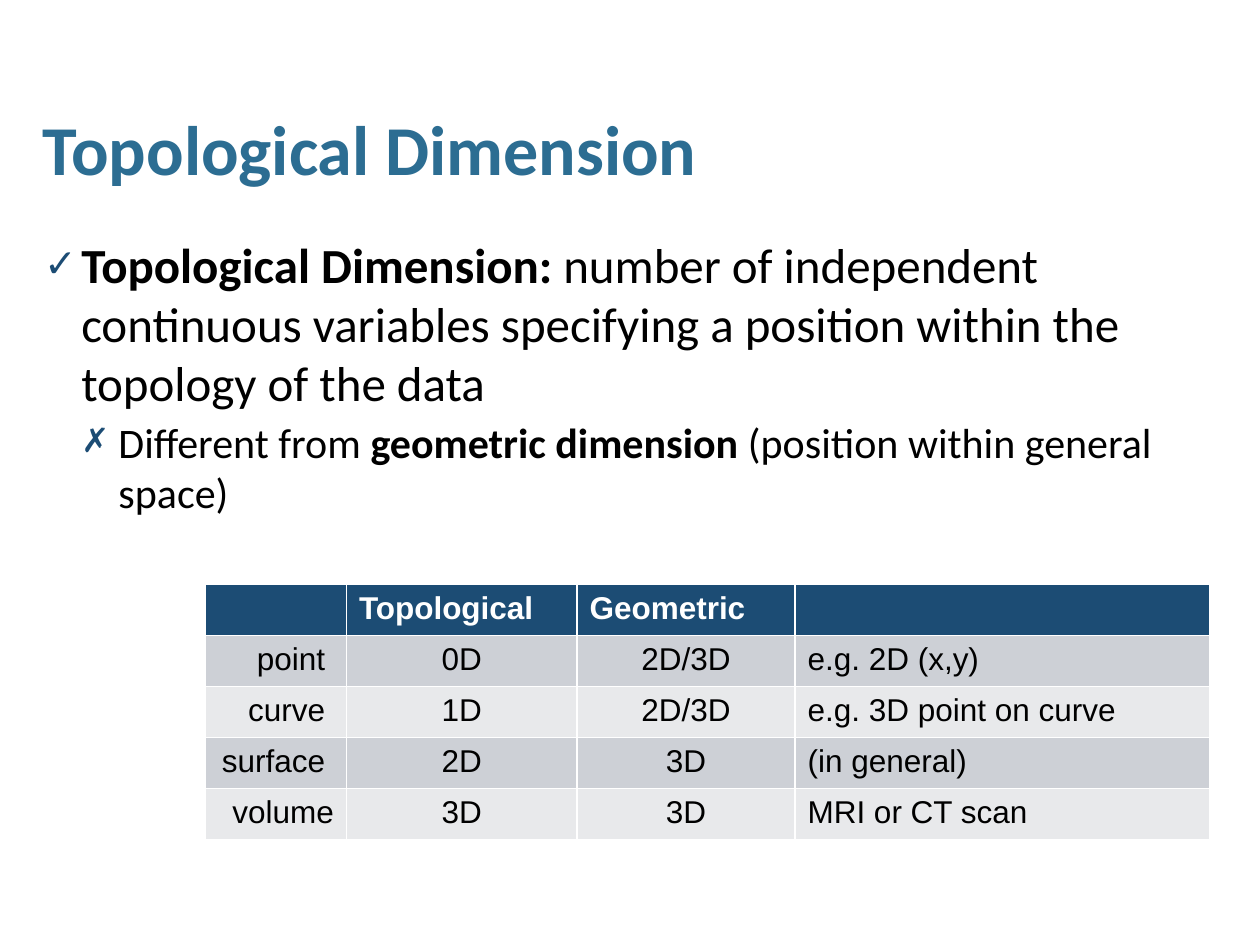
"""Build the slide on topological dimension."""
import pptx
import pptx.dml.color
import pptx.enum.text
import pptx.util
from lxml import etree
from pptx.oxml.ns import qn

RGBColor = pptx.dml.color.RGBColor
Inches = pptx.util.Inches
Pt = pptx.util.Pt
Align = pptx.enum.text.PP_ALIGN

TITLE_BLUE = RGBColor(0x2C, 0x6D, 0x92)
NAVY = RGBColor(0x1C, 0x4C, 0x74)
DARK_BAND = RGBColor(0xCD, 0xD0, 0xD6)
LIGHT_BAND = RGBColor(0xE8, 0xE9, 0xEB)
BLACK = RGBColor(0, 0, 0)
WHITE = RGBColor(255, 255, 255)

INDENT = 0.295
COLUMNS = (1.12, 1.83, 1.73, 3.29)
ROW_HEIGHT = 0.405
ALIGNMENTS = (Align.RIGHT, Align.CENTER, Align.CENTER, Align.LEFT)
ROWS = (
    ("", "Topological", "Geometric", ""),
    ("point ", "0D", "2D/3D", "e.g. 2D (x,y)"),
    ("curve ", "1D", "2D/3D", "e.g. 3D point on curve"),
    ("surface ", "2D", "3D", "(in general)"),
    ("volume", "3D", "3D", "MRI or CT scan"),
)
POINTS = (
    ("✓", 28, (("Topological Dimension: ", True),
               ("number of independent continuous variables specifying "
                "a position within the topology of the data", False))),
    ("✗", 24, (("Different from ", False),
               ("geometric dimension ", True),
               ("(position within general space)", False))),
)


def set_font(para, name, size, color, bold=None):
    """Format the whole paragraph."""
    font = para.font
    font.name, font.size, font.bold = name, Pt(size), bold
    font.color.rgb = color


def place(box, left, top, width, height):
    """Move a placeholder and set its text margins."""
    box.left, box.top = Inches(left), Inches(top)
    box.width, box.height = Inches(width), Inches(height)
    frame = box.text_frame
    frame.margin_left = frame.margin_right = 0
    frame.margin_top = frame.margin_bottom = Inches(0.05)
    frame.auto_size = pptx.enum.text.MSO_AUTO_SIZE.NONE
    return frame


def add_bullet(para, mark, level):
    """Give the paragraph a hanging navy bullet."""
    props = para._p.get_or_add_pPr()
    props.set("marL", str(Inches(INDENT * (level + 1))))
    props.set("indent", str(-Inches(INDENT)))
    color = etree.SubElement(props, qn("a:buClr"))
    etree.SubElement(color, qn("a:srgbClr"), val=str(NAVY))
    etree.SubElement(props, qn("a:buSzPct"), val="80000")
    etree.SubElement(props, qn("a:buChar"), char=mark)


def fill_title(box):
    """Write the slide title."""
    para = place(box, 0.34, 0.84, 9.31, 0.73).paragraphs[0]
    para.text = "Topological Dimension"
    para.alignment = Align.LEFT
    para.line_spacing = 0.95
    set_font(para, "Calibri", 40, TITLE_BLUE, True)


def fill_body(box):
    """Write the definition and its remark."""
    frame = place(box, 0.35, 1.81, 9.32, 4.98)
    for level, (mark, size, spans) in enumerate(POINTS):
        para = frame.add_paragraph() if level else frame.paragraphs[0]
        para.level = level
        para.space_before = Pt(3 if level else 0)
        add_bullet(para, mark, level)
        set_font(para, "Calibri", size, BLACK)
        for text, bold in spans:
            span = para.add_run()
            span.text = text
            span.font.bold = bold


def add_dimension_table(page):
    """Add the table comparing the two kinds of dimension."""
    table = page.shapes.add_table(
        len(ROWS), len(COLUMNS), Inches(1.63), Inches(4.64),
        Inches(sum(COLUMNS)), Inches(ROW_HEIGHT * len(ROWS))).table
    for column, width in zip(table.columns, COLUMNS):
        column.width = Inches(width)
    for row, texts in enumerate(ROWS):
        header = row == 0
        band = NAVY if header else DARK_BAND if row % 2 else LIGHT_BAND
        for column, text in enumerate(texts):
            cell = table.cell(row, column)
            cell.fill.solid()
            cell.fill.fore_color.rgb = band
            para = cell.text_frame.paragraphs[0]
            para.text = text
            para.alignment = Align.LEFT if header else ALIGNMENTS[column]
            set_font(para, "Arial", 18, WHITE if header else BLACK, header)


def main():
    """Build and save the deck."""
    deck = pptx.Presentation()
    deck.slide_width, deck.slide_height = Inches(10), Inches(7.5)
    page = deck.slides.add_slide(deck.slide_layouts[1])
    fill_title(page.shapes.title)
    fill_body(page.placeholders[1])
    add_dimension_table(page)
    deck.save("out.pptx")


if __name__ == "__main__":
    main()
